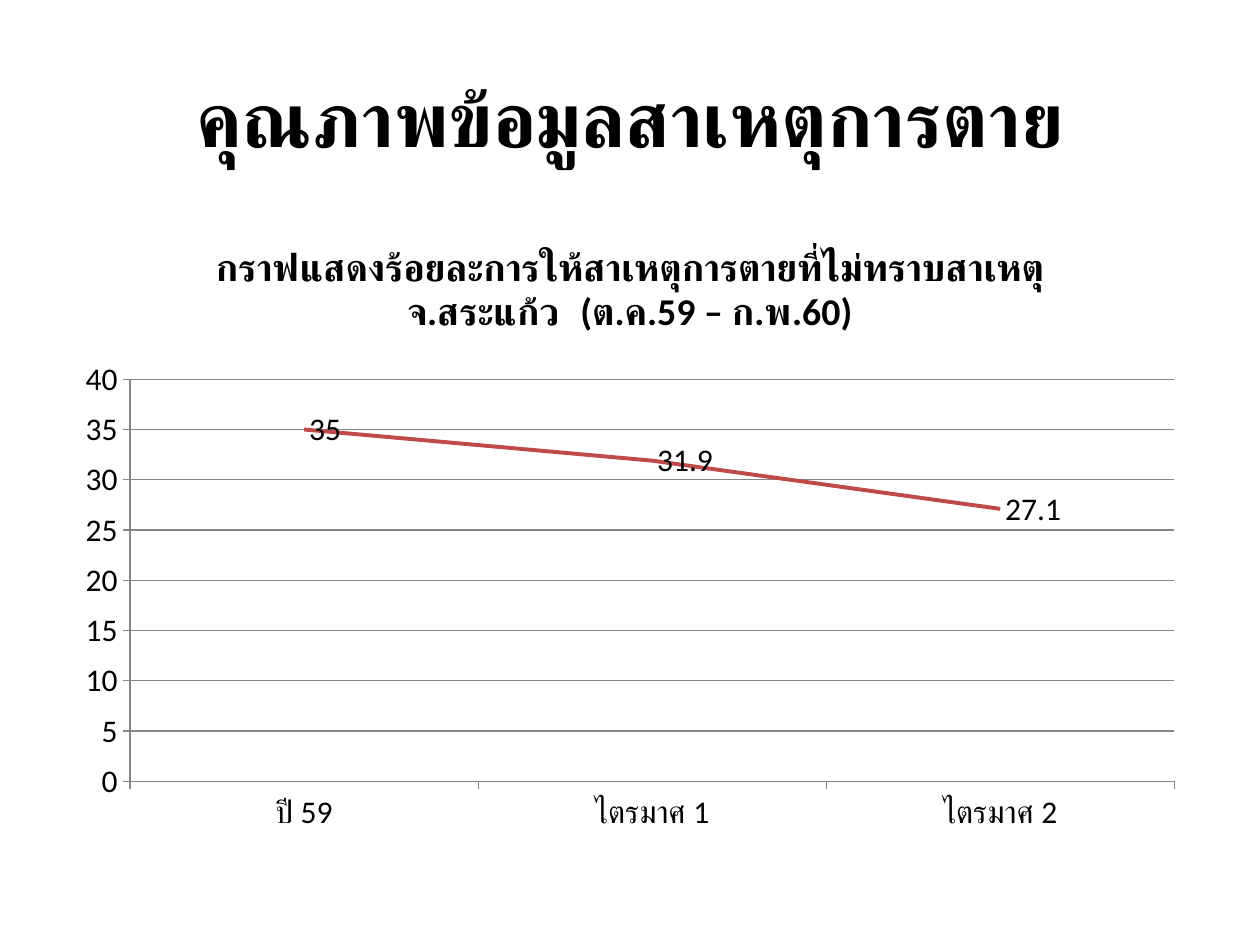
from typing import NamedTuple

from pptx import Presentation
from pptx.chart.data import CategoryChartData
from pptx.dml.color import RGBColor
from pptx.enum.chart import XL_CHART_TYPE as ChartType
from pptx.enum.chart import XL_LABEL_POSITION as LabelPosition
from pptx.enum.chart import XL_MARKER_STYLE as MarkerStyle
from pptx.enum.chart import XL_TICK_MARK as TickMark
from pptx.enum.text import MSO_ANCHOR as Anchor
from pptx.enum.text import PP_ALIGN as Align
from pptx.util import Pt

PX = 9144  # EMU in one px, 100 px to the inch
FONT = "Calibri"
COLORS = {"text": "000000", "series": "BE4B48", "grid": "868686"}
HEADING = "คุณภาพข้อมูลสาเหตุการตาย"
CHART_TITLE = (
    "กราฟแสดงร้อยละการให้สาเหตุการตายที่ไม่ทราบสาเหตุ "
    "จ.สระแก้ว  (ต.ค.59 – ก.พ.60)"
)
UNKNOWN_CAUSE_PERCENT = {"ปี 59": 35, "ไตรมาศ 1": 31.9, "ไตรมาศ 2": 27.1}


class Area(NamedTuple):
    left: int
    top: int
    width: int
    height: int

    def emu(self) -> list[int]:
        return [length * PX for length in self]


TITLE_AREA = Area(50, 30, 900, 125)
CHART_AREA = Area(50, 175, 900, 495)


def color(name: str) -> RGBColor:
    return RGBColor.from_string(COLORS[name])


def style_font(font, size: float, bold: bool = False) -> None:
    font.name = FONT
    font.size = Pt(size)
    font.bold = bold
    font.color.rgb = color("text")


def style_line(line, name: str, width: float) -> None:
    line.color.rgb = color(name)
    line.width = Pt(width)


def add_heading(page) -> None:
    title = page.shapes.title
    title.left, title.top, title.width, title.height = TITLE_AREA.emu()
    frame = title.text_frame
    frame.text = HEADING
    frame.vertical_anchor = Anchor.MIDDLE
    para = frame.paragraphs[0]
    para.alignment = Align.CENTER
    style_font(para.runs[0].font, 44, bold=True)


def add_percent_chart(page) -> None:
    data = CategoryChartData()
    data.categories = list(UNKNOWN_CAUSE_PERCENT)
    data.add_series(CHART_TITLE, list(UNKNOWN_CAUSE_PERCENT.values()))
    chart = page.shapes.add_chart(
        ChartType.LINE_STACKED, *CHART_AREA.emu(), data
    ).chart
    style_font(chart.font, 18)
    chart.has_legend = False

    chart.has_title = True
    title_frame = chart.chart_title.text_frame
    title_frame.text = CHART_TITLE
    style_font(title_frame.paragraphs[0].runs[0].font, 21.6, bold=True)
    chart.chart_title.include_in_layout = False

    for axis in (chart.category_axis, chart.value_axis):
        axis.major_tick_mark = TickMark.OUTSIDE
        axis.minor_tick_mark = TickMark.NONE
        style_line(axis.format.line, "grid", 0.75)
    values = chart.value_axis
    values.minimum_scale, values.maximum_scale, values.major_unit = 0, 40, 5
    values.has_major_gridlines = True
    style_line(values.major_gridlines.format.line, "grid", 0.75)

    plot = chart.plots[0]
    plot.vary_by_categories = False
    series = plot.series[0]
    series.smooth = False
    series.marker.style = MarkerStyle.NONE
    style_line(series.format.line, "series", 2.25)
    labels = series.data_labels
    labels.show_value = True
    labels.position = LabelPosition.RIGHT
    style_font(labels.font, 18)


def main() -> None:
    deck = Presentation()
    deck.slide_width, deck.slide_height = 1000 * PX, 750 * PX
    page = deck.slides.add_slide(deck.slide_layouts[5])
    add_heading(page)
    add_percent_chart(page)
    deck.save("out.pptx")


if __name__ == "__main__":
    main()
